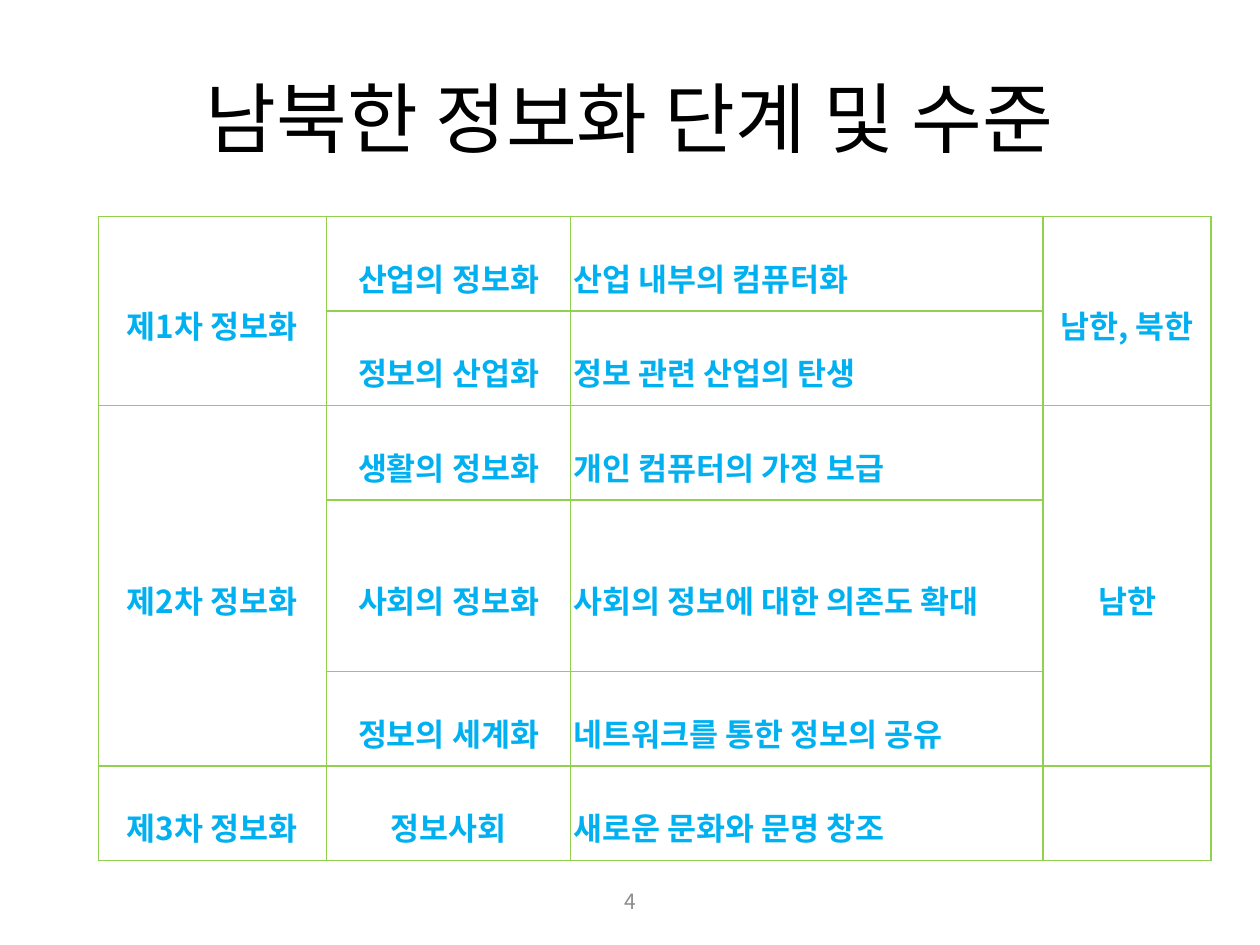
"""Build a slide with a table of the informatization stages of South and North Korea."""
from dataclasses import dataclass

from lxml import etree
from pptx import Presentation
from pptx import util as u
from pptx.dml.color import RGBColor
from pptx.enum import text
from pptx.oxml.ns import qn

FONT = "Noto Sans CJK KR"
BLACK = RGBColor(0x00, 0x00, 0x00)
GRAY = RGBColor(0x8C, 0x8C, 0x8C)
BLUE = RGBColor(0x00, 0xB0, 0xF0)
GREEN = RGBColor(0x92, 0xD0, 0x50)
SLIDE_W, SLIDE_H = u.Inches(10), u.Inches(7.5)
COLS = (1.81, 1.94, 3.75, 1.33)
ROW_H, TALL_ROW, TALL_H = 0.75, 3, 1.36
INSET = u.Inches(0.02)
CENTER, JUSTIFY = text.PP_ALIGN.CENTER, text.PP_ALIGN.JUSTIFY


@dataclass(frozen=True)
class Stage:
    """One stage with its (field, description) steps and the countries at that level."""
    name: str
    steps: tuple
    countries: str = ""


STAGES = (
    Stage("제1차 정보화", (("산업의 정보화", "산업 내부의 컴퓨터화"),
                      ("정보의 산업화", "정보 관련 산업의 탄생")), "남한, 북한"),
    Stage("제2차 정보화", (("생활의 정보화", "개인 컴퓨터의 가정 보급"),
                      ("사회의 정보화", "사회의 정보에 대한 의존도 확대"),
                      ("정보의 세계화", "네트워크를 통한 정보의 공유")), "남한"),
    Stage("제3차 정보화", (("정보사회", "새로운 문화와 문명 창조"),)),
)


def write(tf, value: str, *, size: float, color: RGBColor, bold: bool = False,
          align=CENTER, spacing: float = 1.0) -> None:
    """Write one formatted paragraph into a text frame."""
    p = tf.paragraphs[0]
    p.alignment, p.line_spacing = align, spacing
    r = p.add_run()
    r.text = value
    r.font.name, r.font.size, r.font.bold = FONT, u.Pt(size), bold
    r.font.color.rgb = color
    r.font._element.find(qn("a:latin")).addnext(
        etree.Element(qn("a:ea"), typeface=FONT))


def format_cell(cell) -> None:
    """Give a cell its borders, insets and empty fill."""
    cell.margin_left = cell.margin_right = INSET
    cell.margin_top = cell.margin_bottom = INSET
    cell.vertical_anchor = text.MSO_ANCHOR.MIDDLE
    tc_pr = cell._tc.get_or_add_tcPr()
    for side in ("a:lnL", "a:lnR", "a:lnT", "a:lnB"):
        ln = etree.SubElement(tc_pr, qn(side), w=str(u.Pt(1)))
        fill = etree.SubElement(ln, qn("a:solidFill"))
        etree.SubElement(fill, qn("a:srgbClr"), val=str(GREEN))
    cell.fill.background()


def add_stage_table(s) -> None:
    """Draw the stages, merging the outer columns over each stage's steps."""
    n_rows = sum(len(stage.steps) for stage in STAGES)
    heights = [TALL_H if i == TALL_ROW else ROW_H for i in range(n_rows)]
    table = s.shapes.add_table(n_rows, len(COLS), u.Inches(0.78), u.Inches(1.72),
                               u.Inches(sum(COLS)), u.Inches(sum(heights))).table
    table.first_row = table.horz_banding = False
    for col, width in zip(table.columns, COLS):
        col.width = u.Inches(width)
    for row, height in zip(table.rows, heights):
        row.height = u.Inches(height)
    for cell in table.iter_cells():
        format_cell(cell)

    def put(row: int, col: int, value: str, align=CENTER) -> None:
        """Fill one cell in the table's text style."""
        if value:
            write(table.cell(row, col).text_frame, value, size=18, color=BLUE,
                  bold=True, align=align, spacing=1.6)

    top = 0
    for stage in STAGES:
        bottom = top + len(stage.steps) - 1
        for col, value in ((0, stage.name), (3, stage.countries)):
            if bottom > top:
                table.cell(top, col).merge(table.cell(bottom, col))
            put(top, col, value)
        for row, (field, description) in enumerate(stage.steps, top):
            put(row, 1, field)
            put(row, 2, description, JUSTIFY)
        top = bottom + 1


def main() -> None:
    """Create and save the presentation."""
    prs = Presentation()
    prs.slide_width, prs.slide_height = SLIDE_W, SLIDE_H
    s = prs.slides.add_slide(prs.slide_layouts[5])
    title = s.shapes.title
    title.left, title.top = int(SLIDE_W * 0.05), int(SLIDE_H * 0.04)
    title.width, title.height = int(SLIDE_W * 0.9), u.Inches(1.25)
    title.text_frame.vertical_anchor = text.MSO_ANCHOR.MIDDLE
    write(title.text_frame, "남북한 정보화 단계 및 수준", size=44, color=BLACK)
    number = s.shapes.add_textbox(u.Inches(3.42), u.Inches(6.95),
                                  u.Inches(3.17), u.Inches(0.4))
    number.text_frame.word_wrap = True
    number.text_frame.vertical_anchor = text.MSO_ANCHOR.MIDDLE
    write(number.text_frame, "4", size=12, color=GRAY)
    add_stage_table(s)
    prs.save("out.pptx")


if __name__ == "__main__":
    main()
